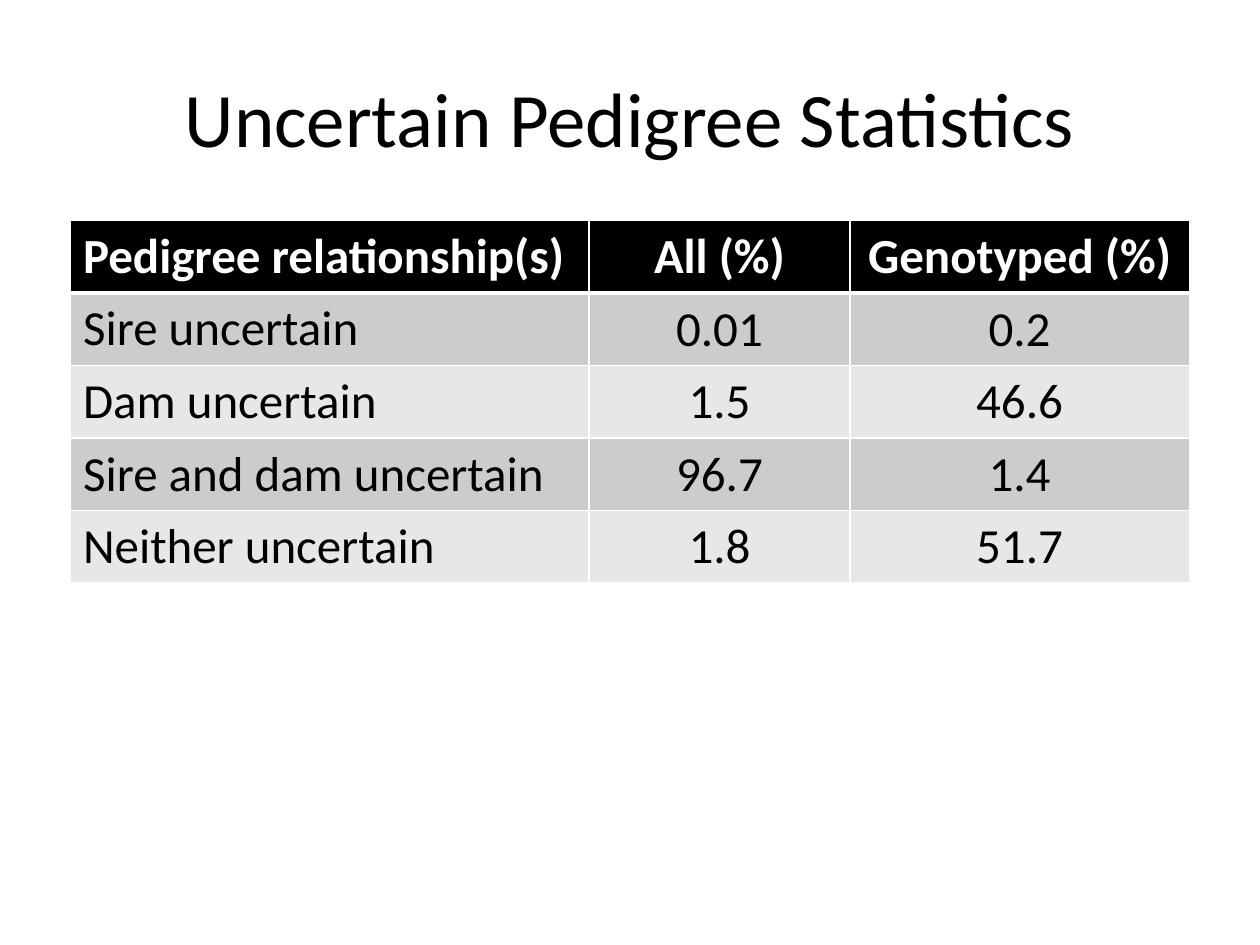
from lxml import etree
from pptx import Presentation
from pptx.dml.color import RGBColor
from pptx.enum.text import MSO_ANCHOR, PP_ALIGN
from pptx.oxml.ns import qn
from pptx.util import Pt

LEFT, CENTER = PP_ALIGN.LEFT, PP_ALIGN.CENTER
TOP, MIDDLE, BOTTOM = MSO_ANCHOR.TOP, MSO_ANCHOR.MIDDLE, MSO_ANCHOR.BOTTOM
FONT = "Calibri"
BLACK, WHITE = "000000", "FFFFFF"
BANDS = ("CCCCCC", "E7E7E7")
COLUMN_WIDTHS = (296.4, 148.9, 194.1)
ROW_HEIGHT = 40.8
STATISTICS = (
    ("Pedigree relationship(s)", "All (%)", "Genotyped (%)"),
    ("Sire uncertain", "0.01", "0.2"),
    ("Dam uncertain", "1.5", "46.6"),
    ("Sire and dam uncertain", "96.7", "1.4"),
    ("Neither uncertain", "1.8", "51.7"),
)


def color(value):
    """Turn a hex string into a colour."""
    return RGBColor.from_string(value)


def write_text(text_frame, text, size, text_color, alignment, bold=False):
    """Write one formatted paragraph."""
    text_frame.text = text
    paragraph = text_frame.paragraphs[0]
    paragraph.alignment = alignment
    font = paragraph.runs[0].font
    font.name, font.size, font.bold = FONT, Pt(size), bold
    font.color.rgb = color(text_color)


def set_borders(cell, widths):
    """Draw white borders of the given widths on a cell's sides."""
    properties = cell._tc.get_or_add_tcPr()
    for side, width in widths.items():
        line = etree.SubElement(properties, qn(f"a:ln{side}"), w=str(Pt(width)))
        fill = etree.SubElement(line, qn("a:solidFill"))
        etree.SubElement(fill, qn("a:srgbClr"), val=WHITE)


def add_title(slide, text, left, top, width, height):
    """Place the slide title in its box."""
    title = slide.shapes.title
    title.left, title.top = Pt(left), Pt(top)
    title.width, title.height = Pt(width), Pt(height)
    write_text(title.text_frame, text, 44, BLACK, CENTER)
    title.text_frame.vertical_anchor = MIDDLE


def add_statistics_table(slide, left, top, width, height):
    """Place the banded statistics table in its box."""
    table = slide.shapes.add_table(
        len(STATISTICS), len(COLUMN_WIDTHS), Pt(left), Pt(top), Pt(width), Pt(height)
    ).table
    for column, column_width in zip(table.columns, COLUMN_WIDTHS):
        column.width = Pt(column_width)
    for row_index, values in enumerate(STATISTICS):
        header = row_index == 0
        fill_color = BLACK if header else BANDS[(row_index - 1) % 2]
        borders = {"L": 1, "R": 1, "T": 3 if row_index == 1 else 1, "B": 3 if header else 1}
        for column_index, value in enumerate(values):
            cell = table.cell(row_index, column_index)
            label = column_index == 0
            write_text(cell.text_frame, value, 28, WHITE if header else BLACK,
                       LEFT if label else CENTER, header)
            cell.vertical_anchor = TOP if label else BOTTOM
            set_borders(cell, borders)
            cell.fill.solid()
            cell.fill.fore_color.rgb = color(fill_color)


def main():
    """Build and save the presentation."""
    presentation = Presentation()
    presentation.slide_width, presentation.slide_height = Pt(720), Pt(540)
    slide = presentation.slides.add_slide(presentation.slide_layouts[5])
    add_title(slide, "Uncertain Pedigree Statistics", 36, 21.6, 648, 90)
    add_statistics_table(slide, 40.3, 126, sum(COLUMN_WIDTHS), ROW_HEIGHT * len(STATISTICS))
    presentation.save("out.pptx")


if __name__ == "__main__":
    main()
